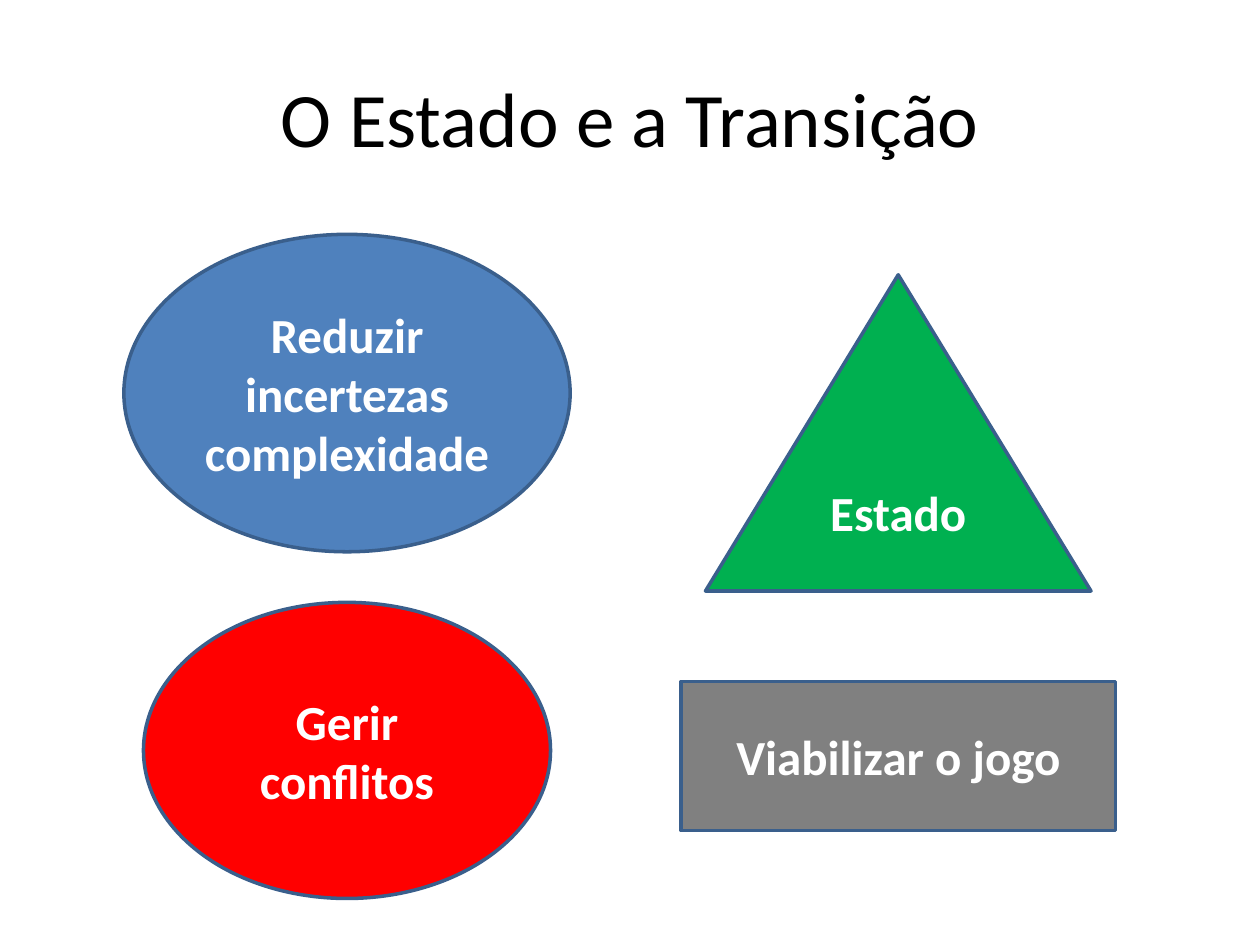
from pptx import Presentation
from pptx.dml.color import RGBColor
from pptx.enum.shapes import MSO_SHAPE
from pptx.enum.text import MSO_ANCHOR, PP_ALIGN
from pptx.util import Pt

BLACK = RGBColor(0x00, 0x00, 0x00)
WHITE = RGBColor(0xFF, 0xFF, 0xFF)
BLUE = RGBColor(0x4F, 0x81, 0xBD)
RED = RGBColor(0xFF, 0x00, 0x00)
GREEN = RGBColor(0x00, 0xB0, 0x50)
GRAY = RGBColor(0x80, 0x80, 0x80)
OUTLINE = RGBColor(0x3A, 0x5F, 0x8C)


def set_text(shape, text, size, color, bold):
    text_frame = shape.text_frame
    text_frame.text = text
    text_frame.word_wrap = True
    text_frame.vertical_anchor = MSO_ANCHOR.MIDDLE
    paragraph = text_frame.paragraphs[0]
    paragraph.alignment = PP_ALIGN.CENTER
    font = paragraph.runs[0].font
    font.name = "Calibri"
    font.size = Pt(size)
    font.bold = bold
    font.color.rgb = color


presentation = Presentation()
presentation.slide_width = Pt(720)
presentation.slide_height = Pt(540)
slide = presentation.slides.add_slide(presentation.slide_layouts[5])

title = slide.shapes.title
title.left, title.top, title.width, title.height = Pt(36), Pt(21.6), Pt(648), Pt(90)
set_text(title, "O Estado e a Transição", 44, BLACK, False)

LEFT_CENTER = 198.3
RIGHT_CENTER = 513.3
figures = [
    (MSO_SHAPE.OVAL, LEFT_CENTER, 133.9, 255, 181.4, BLUE, "Reduzir incertezas complexidade"),
    (MSO_SHAPE.OVAL, LEFT_CENTER, 344.2, 232.6, 169.2, RED, "Gerir conflitos"),
    (MSO_SHAPE.ISOSCELES_TRIANGLE, RIGHT_CENTER, 157, 220.3, 180.7, GREEN, "Estado"),
    (MSO_SHAPE.RECTANGLE, RIGHT_CENTER, 389.5, 248.4, 85, GRAY, "Viabilizar o jogo"),
]
for kind, center, top, width, height, color, text in figures:
    shape = slide.shapes.add_shape(kind, Pt(center - width / 2), Pt(top), Pt(width), Pt(height))
    shape.shadow.inherit = False
    shape.fill.solid()
    shape.fill.fore_color.rgb = color
    shape.line.color.rgb = OUTLINE
    shape.line.width = Pt(2)
    set_text(shape, text, 28, WHITE, True)

presentation.save("out.pptx")
